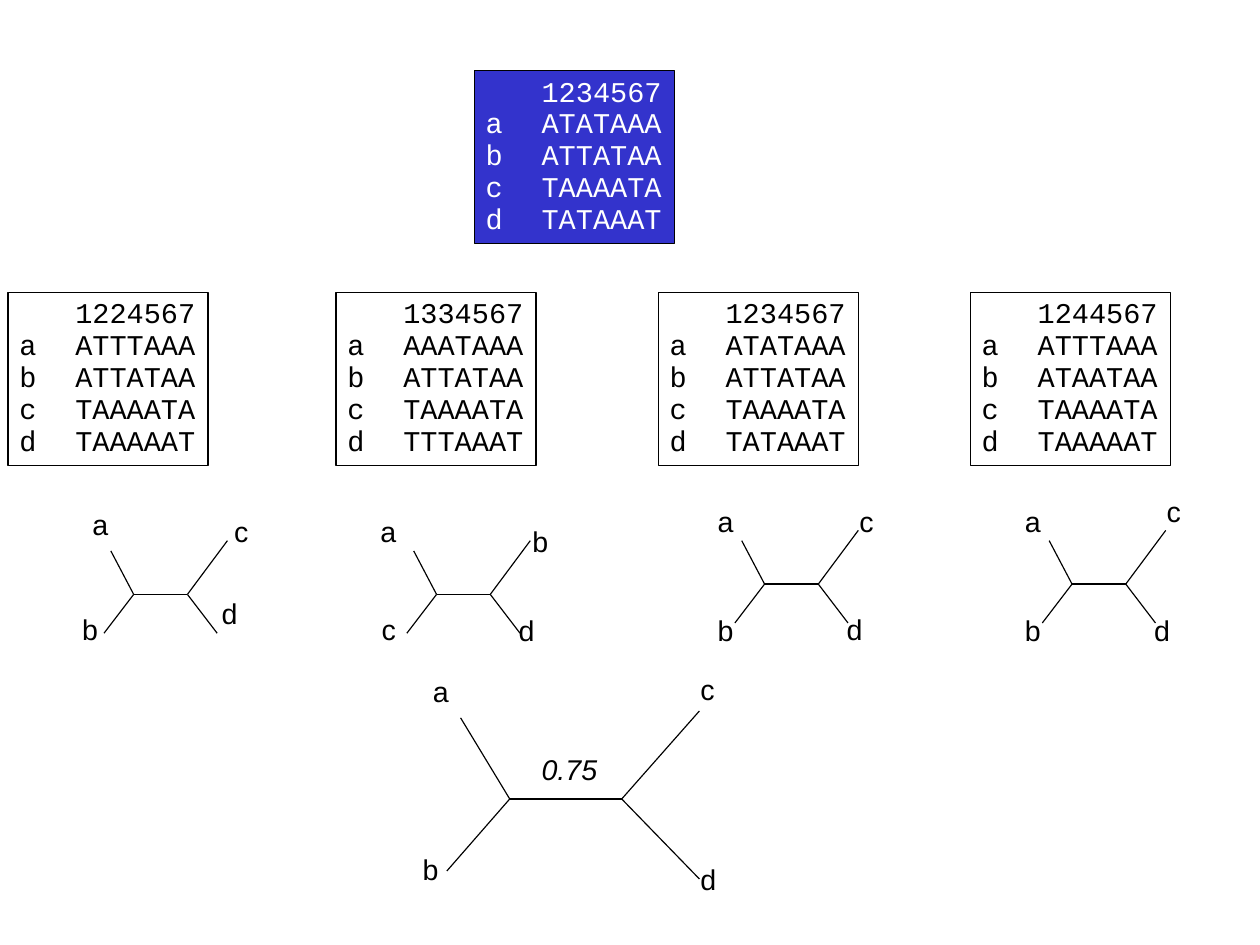
"""Bootstrap example: an alignment, four resampled alignments, their trees and the consensus."""
from pptx import Presentation
from pptx.dml.color import RGBColor
from pptx.enum.shapes import MSO_CONNECTOR, MSO_SHAPE
from pptx.enum.text import MSO_ANCHOR, MSO_AUTO_SIZE, PP_ALIGN
from pptx.oxml.ns import qn
from pptx.util import Pt
from lxml import etree

PX = 9144
BLACK = RGBColor(0x00, 0x00, 0x00)
WHITE = RGBColor(0xFF, 0xFF, 0xFF)
BLUE = RGBColor(0x33, 0x33, 0xCC)


def write(box, text, font, color, italic=False, wrap=False):
    frame = box.text_frame
    frame.text = text
    frame.word_wrap = wrap
    frame.auto_size = MSO_AUTO_SIZE.SHAPE_TO_FIT_TEXT
    frame.vertical_anchor = MSO_ANCHOR.TOP
    for paragraph in frame.paragraphs:
        paragraph.alignment = PP_ALIGN.LEFT
        paragraph.line_spacing = 0.93
        for run in paragraph.runs:
            run.font.name = font
            run.font.size = Pt(18)
            run.font.color.rgb = color
            run.font.italic = italic


presentation = Presentation()
presentation.slide_width = Pt(793.75)
presentation.slide_height = Pt(595.25)
slide = presentation.slides.add_slide(presentation.slide_layouts[6])
shapes = slide.shapes

alignments = [
    (415, 62, BLUE, "1234567 ATATAAA ATTATAA TAAAATA TATAAAT"),
    (7, 256, None, "1224567 ATTTAAA ATTATAA TAAAATA TAAAAAT"),
    (294, 256, None, "1334567 AAATAAA ATTATAA TAAAATA TTTAAAT"),
    (576, 256, None, "1234567 ATATAAA ATTATAA TAAAATA TATAAAT"),
    (849, 256, None, "1244567 ATTTAAA ATAATAA TAAAATA TAAAAAT"),
]
taxa = ["", "a ", "b", "c", "d"]
for left, top, fill, sites in alignments:
    matrix = shapes.add_shape(MSO_SHAPE.RECTANGLE, left * PX, top * PX, 175 * PX, 151 * PX)
    matrix.shadow.inherit = False
    matrix.line.color.rgb = BLACK
    matrix.line.width = Pt(0.75)
    if fill is None:
        matrix.fill.background()
    else:
        matrix.fill.solid()
        matrix.fill.fore_color.rgb = fill
    rows = [f"{taxon}\t{row}" for taxon, row in zip(taxa, sites.split())]
    write(matrix, "\n".join(rows), "Courier New", BLACK if fill is None else WHITE)
    for paragraph in matrix.text_frame.paragraphs:
        tab_list = etree.SubElement(paragraph._p.get_or_add_pPr(), qn("a:tabLst"))
        etree.SubElement(tab_list, qn("a:tab"), pos=str(49 * PX), algn="l")

replicate_branches = [(-20, -38), (-26, 34), (82, -47), (73, 34)]
consensus_branches = [(-43, -71), (-55, 63), (166, -77), (166, 70)]
trees = [
    (117, 520, 47, replicate_branches,
     [("a", 71, 441, 34), ("b", 62, 533, 34), ("c", 195, 447, 33), ("d", 184, 519, 34)]),
    (382, 520, 47, replicate_branches,
     [("a", 323, 447, 34), ("c", 324, 533, 33), ("b", 456, 456, 34), ("d", 444, 534, 34)]),
    (669, 511, 47, replicate_branches,
     [("a", 618, 439, 34), ("b", 618, 534, 34), ("c", 742, 439, 33), ("d", 731, 533, 34)]),
    (938, 511, 47, replicate_branches,
     [("a", 887, 439, 34), ("b", 887, 534, 34), ("c", 1011, 430, 33), ("d", 1000, 534, 34)]),
    (446, 699, 98, consensus_branches,
     [("a", 369, 587, 34), ("b", 360, 743, 34), ("c", 603, 586, 33), ("d", 603, 752, 78)]),
]
for node_x, node_y, stem, branches, tips in trees:
    edges = [(0, 0, stem, 0)]
    edges += [(0 if dx < 0 else stem, 0, dx, dy) for dx, dy in branches]
    for x1, y1, x2, y2 in edges:
        edge = shapes.add_connector(
            MSO_CONNECTOR.STRAIGHT,
            (node_x + x1) * PX, (node_y + y1) * PX,
            (node_x + x2) * PX, (node_y + y2) * PX)
        edge.line.color.rgb = BLACK
        edge.line.width = Pt(0.75)
        etree.SubElement(edge._element.spPr, qn("a:effectLst"))
    for taxon, left, top, width in tips:
        tip = shapes.add_textbox(left * PX, top * PX, width * PX, 38 * PX)
        write(tip, taxon, "Arial", BLACK, wrap=width > 34)

support = shapes.add_textbox(464 * PX, 656 * PX, 69 * PX, 38 * PX)
write(support, "0.75", "Arial", BLACK, italic=True)

presentation.save("out.pptx")
